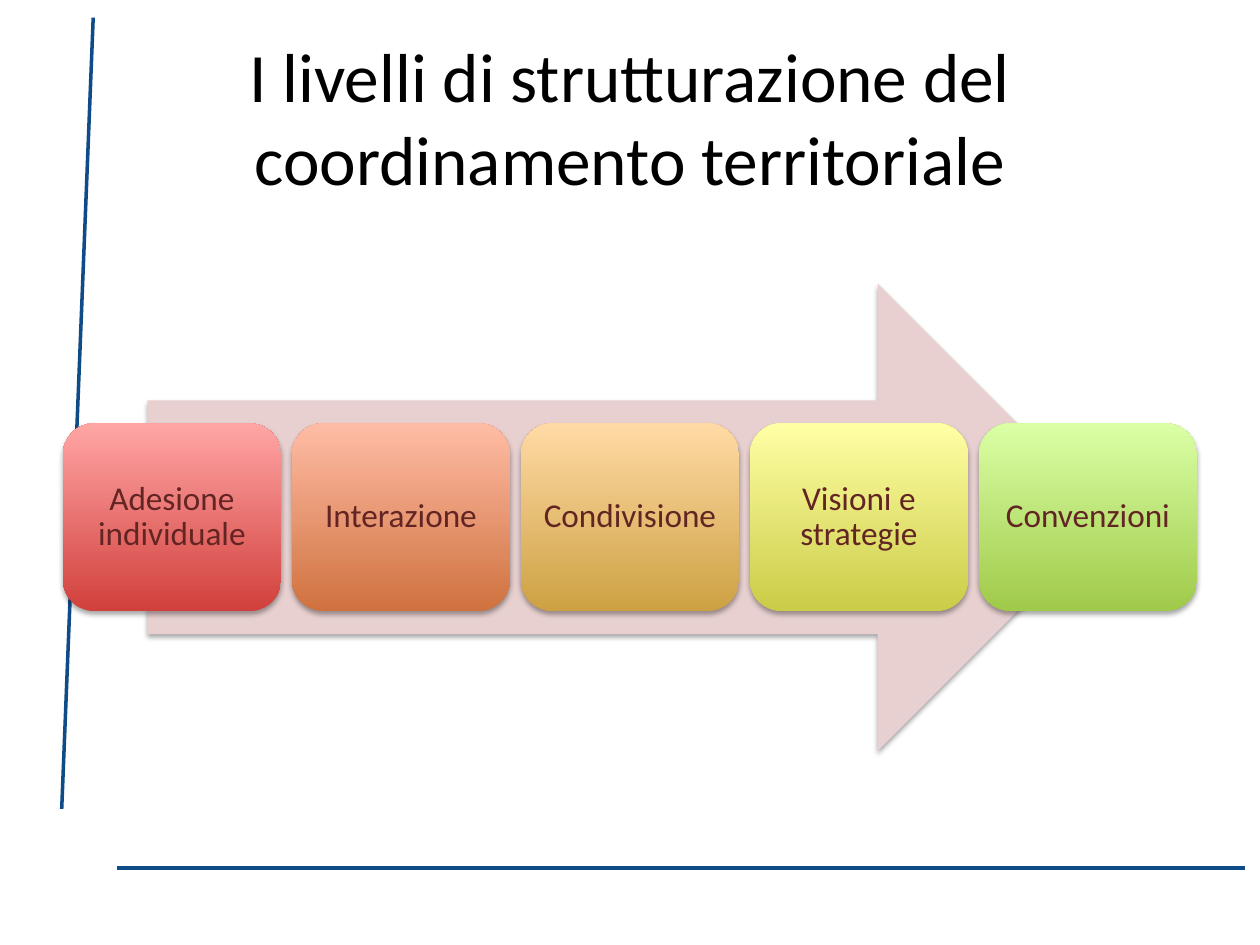
from lxml import etree
from pptx import Presentation
from pptx.dml.color import RGBColor
from pptx.enum.shapes import MSO_CONNECTOR, MSO_SHAPE
from pptx.enum.text import MSO_ANCHOR, PP_ALIGN
from pptx.oxml.ns import qn
from pptx.util import Inches, Pt

STRAIGHT = MSO_CONNECTOR.STRAIGHT
RIGHT_ARROW = MSO_SHAPE.RIGHT_ARROW
ROUNDED = MSO_SHAPE.ROUNDED_RECTANGLE
MIDDLE = MSO_ANCHOR.MIDDLE
CENTER = PP_ALIGN.CENTER
FONT = "Calibri"


def color(hex_string):
    return RGBColor.from_string(hex_string)


def add_soft_shadow(shape):
    """Replace the theme shadow with a soft black one falling straight down."""
    shape.shadow.inherit = False
    effects = shape._element.spPr.find(qn("a:effectLst"))
    shadow = etree.SubElement(
        effects, qn("a:outerShdw"), blurRad=str(Pt(3.1)), dist=str(Pt(1.8)),
        dir="5400000", rotWithShape="0")
    black = etree.SubElement(shadow, qn("a:srgbClr"), val="000000")
    etree.SubElement(black, qn("a:alpha"), val="35000")


deck = Presentation()
deck.slide_width = Inches(10)
deck.slide_height = Inches(7.5)
page = deck.slides.add_slide(deck.slide_layouts[5])

# Frame lines
for x1, y1, x2, y2 in [(0.74, 0.14, 0.49, 6.42), (9.88, 6.89, 0.93, 6.89)]:
    line = page.shapes.add_connector(
        STRAIGHT, Inches(x1), Inches(y1), Inches(x2), Inches(y2))
    line.line.color.rgb = color("0F4B87")
    line.line.width = Pt(2)
    etree.SubElement(line._element.spPr, qn("a:effectLst"))

# Title
title = page.shapes.title
title.left, title.top = Inches(0.5), Inches(0.3)
title.width, title.height = Inches(9), Inches(1.25)
title.text_frame.vertical_anchor = MIDDLE
para = title.text_frame.paragraphs[0]
para.alignment = CENTER
span = para.add_run()
span.text = "I livelli di strutturazione del coordinamento territoriale"
span.font.name = FONT
span.font.size = Pt(39.6)
span.font.color.rgb = color("000000")

# Arrow behind the levels
arrow = page.shapes.add_shape(
    RIGHT_ARROW, Inches(1.17), Inches(2.25), Inches(7.65), Inches(3.71))
arrow.fill.solid()
arrow.fill.fore_color.rgb = color("E8D0D0")
arrow.line.fill.background()
add_soft_shadow(arrow)

# Levels: text, bottom colour, top colour
levels = [
    ("Adesione individuale", "D1403C", "FFA6A5"),
    ("Interazione", "CF723F", "FFBCA5"),
    ("Condivisione", "CDA143", "FFDAA5"),
    ("Visioni e strategie", "CBCC47", "FFFFA5"),
    ("Convenzioni", "A0CA4A", "DAFFA5"),
]
first_left, last_left = 0.5, 7.77
box_step = (last_left - first_left) / (len(levels) - 1)
for index, (text, bottom_color, top_color) in enumerate(levels):
    box = page.shapes.add_shape(
        ROUNDED, Inches(first_left + index * box_step), Inches(3.36),
        Inches(1.73), Inches(1.49))
    box.fill.gradient()
    box.fill.gradient_angle = 90
    for stop, stop_color, position in zip(
            box.fill.gradient_stops, (bottom_color, top_color), (0, 1)):
        stop.color.rgb = color(stop_color)
        stop.position = position
    box.line.fill.background()
    add_soft_shadow(box)

    frame = box.text_frame
    frame.word_wrap = True
    frame.vertical_anchor = MIDDLE
    frame.margin_left = frame.margin_right = Inches(0.08)
    frame.margin_top = frame.margin_bottom = Inches(0.08)
    para = frame.paragraphs[0]
    para.alignment = CENTER
    para.line_spacing = 0.9
    span = para.add_run()
    span.text = text
    span.font.name = FONT
    span.font.size = Pt(19)
    span.font.color.rgb = color("632523")

deck.save("out.pptx")
